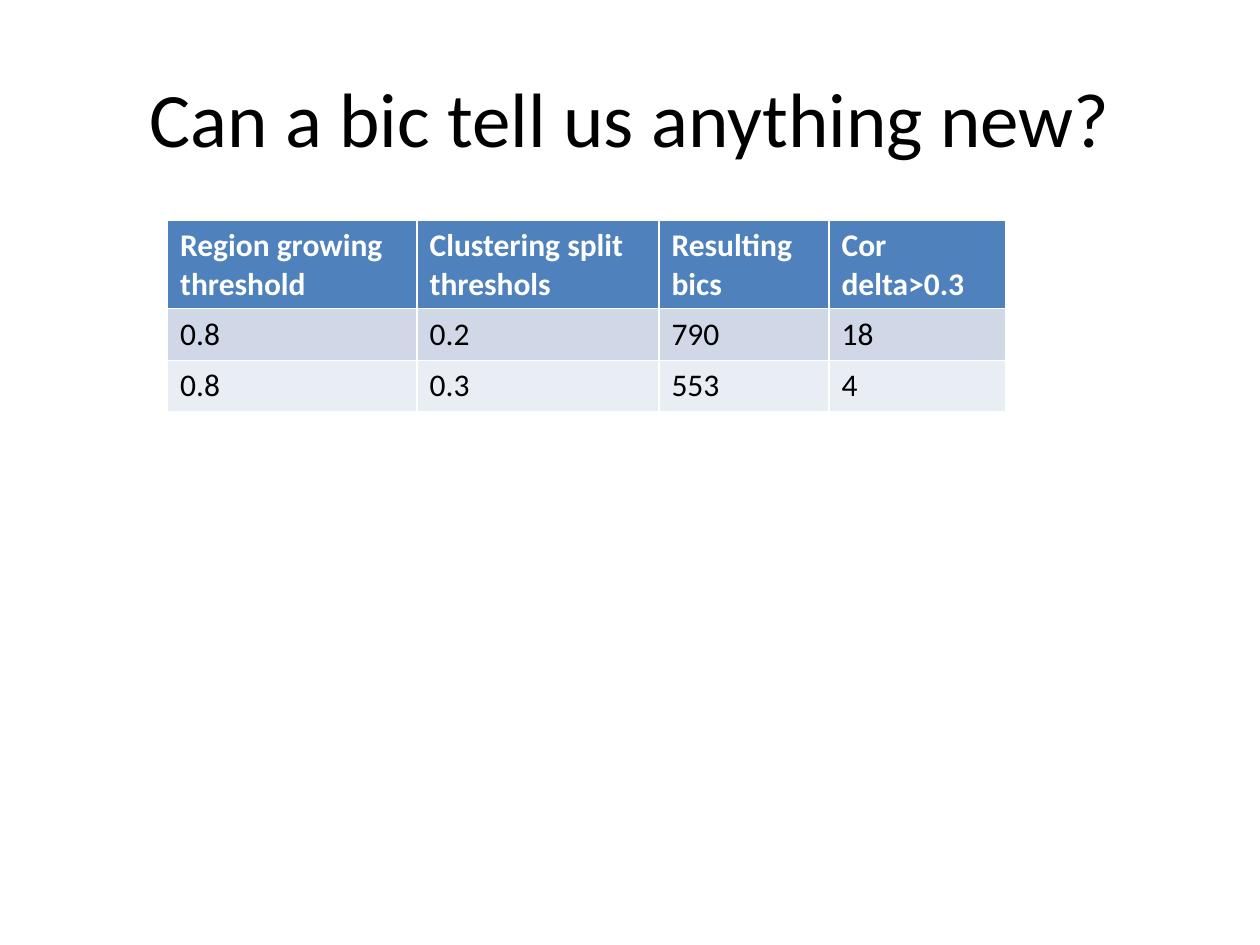
from pptx import Presentation
from pptx.dml.color import RGBColor
from pptx.enum.text import MSO_ANCHOR, PP_ALIGN
from pptx.util import Inches, Pt

FONT = "Calibri"
COLORS = {
    "text": "000000",
    "header_text": "FFFFFF",
    "header": "4F81BD",
    "odd_row": "D0D8E8",
    "even_row": "E9EDF4",
}
COLUMN_WIDTHS = [1.98, 1.92, 1.35, 1.4]
ROW_HEIGHTS = [0.7, 0.41, 0.41]
ROWS = [
    ["Region growing threshold", "Clustering split threshols", "Resulting bics", "Cor delta>0.3"],
    ["0.8", "0.2", "790", "18"],
    ["0.8", "0.3", "553", "4"],
]


def style_paragraph(para, size, color, bold=False):
    """Set the font of a whole paragraph."""
    para.font.name = FONT
    para.font.size = Pt(size)
    para.font.bold = bold
    para.font.color.rgb = RGBColor.from_string(COLORS[color])


def add_title(page, text, left, top, width, height):
    """Place the centred slide title in the given box."""
    box = page.shapes.add_textbox(Inches(left), Inches(top), Inches(width), Inches(height))
    frame = box.text_frame
    frame.word_wrap = True
    frame.vertical_anchor = MSO_ANCHOR.MIDDLE
    para = frame.paragraphs[0]
    para.text = text
    para.alignment = PP_ALIGN.CENTER
    style_paragraph(para, 44, "text")


def add_results_table(page, left, top, width, height):
    """Place the threshold results table, scaled to the given box."""
    table = page.shapes.add_table(
        len(ROWS), len(COLUMN_WIDTHS), Inches(left), Inches(top), Inches(width), Inches(height)
    ).table
    for column, share in zip(table.columns, COLUMN_WIDTHS):
        column.width = Inches(width * share / sum(COLUMN_WIDTHS))
    for row, share in zip(table.rows, ROW_HEIGHTS):
        row.height = Inches(height * share / sum(ROW_HEIGHTS))
    for row_index, values in enumerate(ROWS):
        is_header = row_index == 0
        fill = "header" if is_header else "odd_row" if row_index % 2 else "even_row"
        for column_index, value in enumerate(values):
            cell = table.cell(row_index, column_index)
            cell.text = value
            cell.fill.solid()
            cell.fill.fore_color.rgb = RGBColor.from_string(COLORS[fill])
            style_paragraph(
                cell.text_frame.paragraphs[0], 18, "header_text" if is_header else "text", is_header
            )


def main():
    """Build the slide and save the deck."""
    deck = Presentation()
    deck.slide_width = Inches(10)
    deck.slide_height = Inches(7.5)
    page = deck.slides.add_slide(deck.slide_layouts[6])
    add_title(page, "Can a bic tell us anything new?", 0.5, 0.3, 9, 1.25)
    add_results_table(page, 1.33, 1.75, sum(COLUMN_WIDTHS), sum(ROW_HEIGHTS))
    deck.save("out.pptx")


if __name__ == "__main__":
    main()
